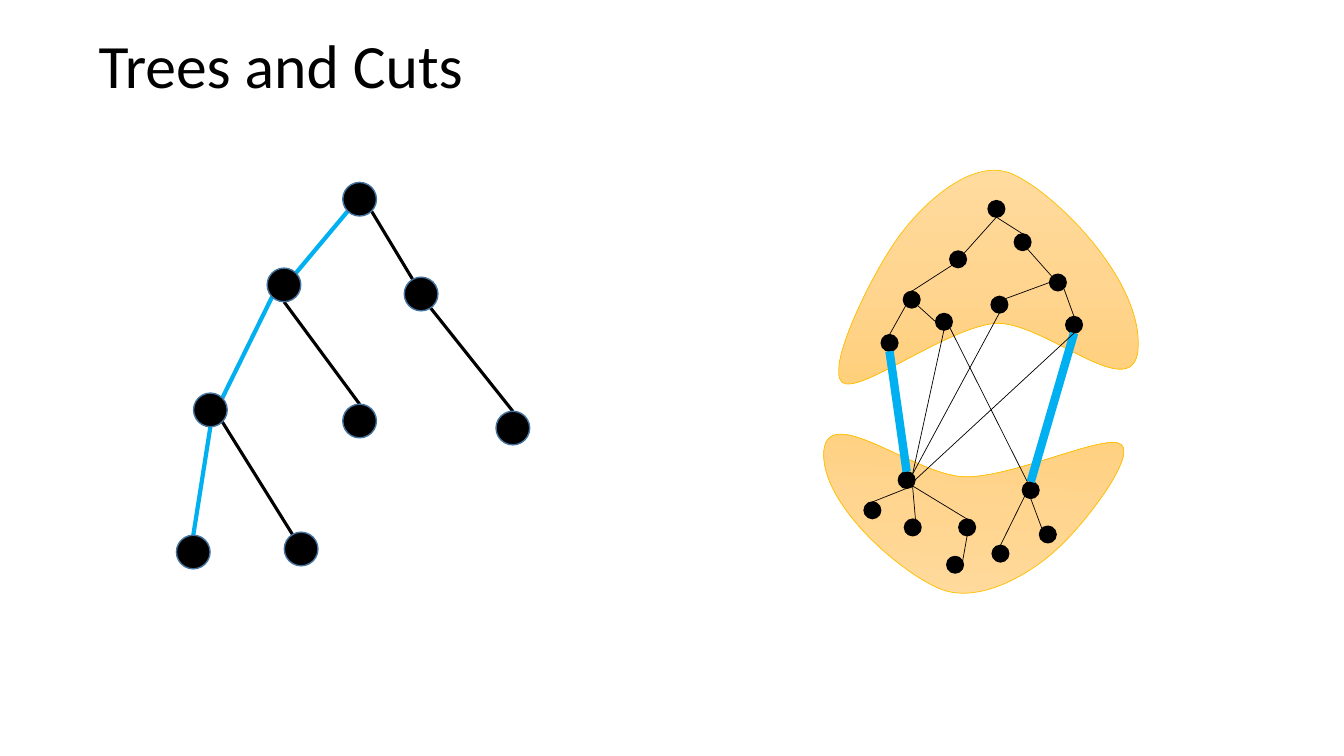
from copy import deepcopy
from dataclasses import dataclass
from math import cos, radians, sin
from lxml.etree import SubElement
from pptx import Presentation
from pptx.dml.color import RGBColor
from pptx.enum.shapes import MSO_CONNECTOR as Connector, MSO_SHAPE as Shape
from pptx.enum.text import MSO_ANCHOR as Anchor
from pptx.oxml.ns import qn
from pptx.util import Inches, Pt

BLACK, BLUE, GOLD, STEEL = "000000", "00B0F0", "FFC000", "43739E"
SANDS = ("FFDB9E", "FFD590", "FFD07C")
CELLS_PER_INCH = 100

DIAGONAL = 0.5 ** 0.5
SITES = {
    "top": (0, -1), "bottom": (0, 1), "left": (-1, 0), "right": (1, 0),
    "top_left": (-DIAGONAL, -DIAGONAL), "top_right": (DIAGONAL, -DIAGONAL),
    "bottom_left": (-DIAGONAL, DIAGONAL), "bottom_right": (DIAGONAL, DIAGONAL),
    "inner_top": (-0.1, -0.2), "inner_bottom": (0.3, 0.5),
    "left_of_top": (-0.4, -1), "right_of_top": (0.33, -1),
}

TREE_NODES = {
    "root": (240, 31), "left": (165, 116), "right": (301, 125), "outer": (92, 240),
    "inner": (240, 251), "far": (392, 258), "low": (75, 381), "last": (182, 378),
}
TREE_PATH = [
    ("root", "bottom_left", "left", "top_right"),
    ("left", "bottom_left", "outer", "top_right"),
    ("outer", "bottom", "low", "top"),
]
TREE_BRANCHES = [
    ("left", "bottom", "inner", "top"),
    ("right", "inner_bottom", "far", "top"),
    ("root", "bottom_right", "right", "inner_top"),
    ("outer", "bottom_right", "last", "inner_top"),
]

CUT_NODES = {
    "root": (180, 49), "a": (142, 99), "b": (206, 82), "c": (96, 139), "d": (241, 122),
    "e": (74, 182), "f": (128, 161), "g": (183, 144), "h": (257, 164),
    "p": (91, 318), "q": (214, 328), "r": (57, 348), "s": (97, 365),
    "t": (151, 365), "u": (139, 402), "v": (184, 391), "w": (231, 372),
}
CUT_CROSSINGS = [("h", "bottom", "q", "top"), ("e", "bottom", "p", "top")]
CUT_EDGES = [
    ("root", "bottom", "a", "top_right"), ("root", "bottom", "b", "top"),
    ("b", "inner_bottom", "d", "top_left"), ("d", "bottom_right", "h", "top"),
    ("d", "left", "g", "top_right"), ("a", "bottom_left", "c", "top"),
    ("c", "bottom_left", "e", "top"), ("c", "bottom_right", "f", "left"),
    ("p", "bottom", "r", "top"), ("p", "bottom_right", "s", "right_of_top"),
    ("q", "bottom_left", "v", "top"), ("q", "bottom", "w", "top_left"),
    ("t", "bottom", "u", "bottom_right"), ("p", "bottom_right", "t", "top"),
    ("g", "bottom", "p", "top_right"), ("f", "bottom_right", "q", "left_of_top"),
    ("h", "bottom", "p", "right"), ("f", "bottom", "p", "top_right"),
]
UPPER_FRAME = (32, 19, 297, 212)
UPPER_SIDE = [
    (35, 229), (19, 214), (66, 119), (92, 84), (117, 50), (166, 5), (205, 23),
    (245, 41), (329, 123), (329, 191), (329, 260), (234, 165), (185, 171),
    (136, 177), (50, 243), (35, 229),
]
LOWER_FRAME = (13, 279, 297, 160)
LOWER_SIDE = [
    (312, 291), (327, 303), (275, 371), (248, 395), (221, 420), (170, 450), (132, 434),
    (93, 418), (14, 350), (17, 298), (21, 247), (111, 325), (160, 323),
    (209, 322), (298, 279), (312, 291),
]


@dataclass
class Box:
    left: float
    top: float
    width: float
    height: float

    def at(self, column, row):
        return (Inches(self.left + column / CELLS_PER_INCH),
                Inches(self.top + row / CELLS_PER_INCH))


def colour(value):
    return RGBColor.from_string(value)


def add_text(page, box, text, size=18, font="Calibri", ink=BLACK, spacing=1.0):
    holder = page.shapes.add_textbox(
        Inches(box.left), Inches(box.top), Inches(box.width), Inches(box.height))
    frame = holder.text_frame
    frame.word_wrap = True
    frame.vertical_anchor = Anchor.MIDDLE
    para = frame.paragraphs[0]
    para.line_spacing = spacing
    span = para.add_run()
    span.text = text
    span.font.size, span.font.name = Pt(size), font
    span.font.color.rgb = colour(ink)


def set_line(shape, ink, width):
    shape.line.color.rgb = colour(ink)
    shape.line.width = Pt(width)


def add_nodes(page, box, nodes, diameter, outline):
    side = Inches(diameter / CELLS_PER_INCH)
    for corner in nodes.values():
        node = page.shapes.add_shape(Shape.OVAL, *box.at(*corner), side, side)
        node.shadow.inherit = False
        node.fill.solid()
        node.fill.fore_color.rgb = colour(BLACK)
        set_line(node, outline, 1)


def add_edges(page, box, nodes, diameter, edges, ink, width):
    radius = diameter / 2

    def site(name, side):
        return box.at(*(corner + radius + radius * shift
                        for corner, shift in zip(nodes[name], SITES[side])))

    for start, start_side, end, end_side in edges:
        edge = page.shapes.add_connector(
            Connector.STRAIGHT, *site(start, start_side), *site(end, end_side))
        set_line(edge, ink, width)
        SubElement(edge._element.spPr, qn("a:effectLst"))


def turn_back(point, frame, angle):
    left, top, width, height = frame
    across, down = point[0] - left - width / 2, point[1] - top - height / 2
    cosine, sine = cos(radians(angle)), sin(radians(angle))
    return (width / 2 + across * cosine + down * sine,
            height / 2 - across * sine + down * cosine)


def write_curve(outline, points):
    for child in list(outline):
        outline.remove(child)
    groups = [("moveTo", points[:1])]
    groups += [("cubicBezTo", points[i:i + 3]) for i in range(1, len(points), 3)]
    for name, group in groups:
        command = SubElement(outline, qn("a:" + name))
        for column, row in group:
            SubElement(command, qn("a:pt"),
                       x=str(round(Inches(column / CELLS_PER_INCH))),
                       y=str(round(Inches(row / CELLS_PER_INCH))))
    SubElement(outline, qn("a:close"))


def add_side(page, box, frame, points, angle=0):
    left, top, width, height = frame
    builder = page.shapes.build_freeform(*box.at(left, top))
    builder.add_line_segments([box.at(left + width, top + height)])
    side = builder.convert_to_shape()
    outline = next(side._element.iter(qn("a:path")))
    write_curve(outline, [turn_back(point, frame, angle) for point in points])
    side.rotation = angle
    side.shadow.inherit = False
    side.fill.gradient()
    side.fill.gradient_angle = 270
    first = next(side._element.iter(qn("a:gs")))
    middle = deepcopy(first)
    middle.set("pos", "50000")
    first.addnext(middle)
    for stop, shade in zip(side.fill.gradient_stops, SANDS):
        stop.color.rgb = colour(shade)
    set_line(side, GOLD, 0.5)


def draw_cut(page, box, diameter=16.5):
    add_side(page, box, UPPER_FRAME, UPPER_SIDE)
    add_side(page, box, LOWER_FRAME, LOWER_SIDE, angle=184)
    add_nodes(page, box, CUT_NODES, diameter, BLACK)
    add_edges(page, box, CUT_NODES, diameter, CUT_CROSSINGS, BLUE, 6)
    add_edges(page, box, CUT_NODES, diameter, CUT_EDGES, BLACK, 0.5)


def draw_tree(page, box, diameter=33.4):
    add_edges(page, box, TREE_NODES, diameter, TREE_PATH, BLUE, 3)
    add_edges(page, box, TREE_NODES, diameter, TREE_BRANCHES, BLACK, 2.25)
    add_nodes(page, box, TREE_NODES, diameter, STEEL)


def main():
    deck = Presentation()
    deck.slide_width, deck.slide_height = Inches(13.33), Inches(7.5)
    page = deck.slides.add_slide(deck.slide_layouts[6])
    add_text(page, Box(0.88, -0.05, 11.5, 1.45), "Trees and Cuts", size=44, spacing=0.9)
    draw_cut(page, Box(8, 1.5, 3.5, 4.5))
    draw_tree(page, Box(1, 1.5, 4.5, 4.5))
    deck.save("out.pptx")


if __name__ == "__main__":
    main()
